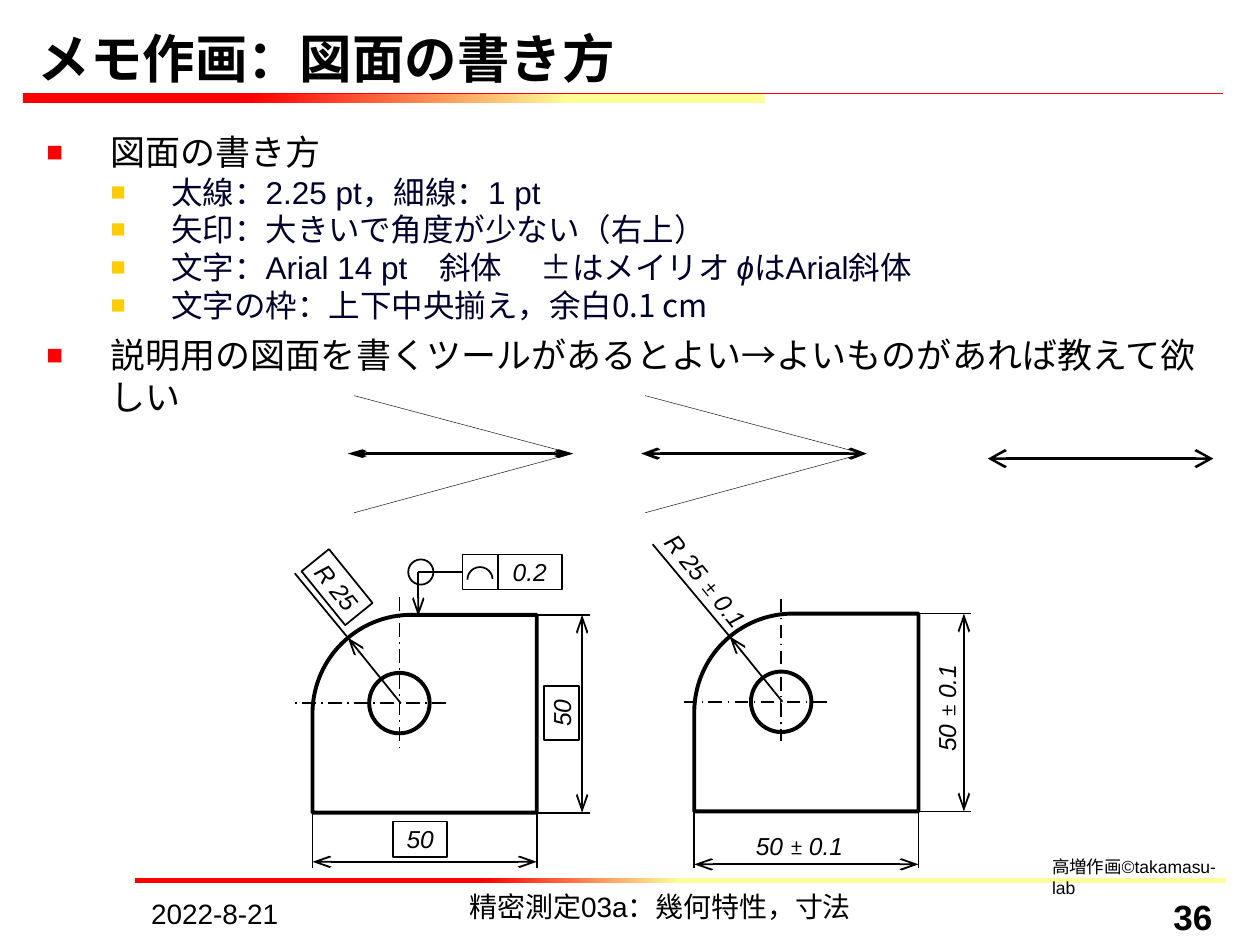
import pptx
import pptx.util
import pptx.dml.color
import pptx.enum.dml
import pptx.enum.shapes
import pptx.enum.text
import pptx.oxml
import pptx.oxml.ns
from lxml import etree

Inches = pptx.util.Inches
Pt = pptx.util.Pt
RGBColor = pptx.dml.color.RGBColor
SHAPE = pptx.enum.shapes.MSO_SHAPE
ALIGN = pptx.enum.text.PP_ALIGN
ANCHOR = pptx.enum.text.MSO_ANCHOR
qn = pptx.oxml.ns.qn

BLACK = RGBColor(0x00, 0x00, 0x00)
WHITE = RGBColor(0xFF, 0xFF, 0xFF)
RED = RGBColor(0xFF, 0x00, 0x00)
YELLOW = RGBColor(0xFF, 0xFF, 0x99)
GOLD = RGBColor(0xFF, 0xCC, 0x00)
NAVY = RGBColor(0x00, 0x00, 0x2A)
JP = "Noto Sans CJK JP"
TOLERANCE = [("± ", "Cambria", False), ("0.1", "Arial", True)]
LEVELS = [
    dict(size=20, color=BLACK, bullet=RED, left=0.51, hang=0.51, line=24),
    dict(size=18, color=NAVY, bullet=GOLD, left=0.99, hang=0.48, line=21.5),
]
BODY = [
    (0, [("図面の書き方", "Arial", False)]),
    (1, [("太線：2.25 pt，細線：1 pt", "Arial", False)]),
    (1, [("矢印：大きいで角度が少ない（右上）", "Arial", False)]),
    (1, [("文字：Arial 14 pt　斜体　 ", "Arial", False), ("±はメイリオ ", JP, False),
         ("ϕ", "Arial", True), ("はArial斜体", "Arial", False)]),
    (1, [("文字の枠：上下中央揃え，余白0.1 cm", JP, False)]),
    (0, [("説明用の図面を書くツールがあるとよい→よいものがあれば教えて欲しい", "Arial", False)]),
]


def add_runs(p, runs, size, color=BLACK, bold=False):
    for text, font, italic in runs:
        r = p.add_run()
        r.text = text
        r.font.size = Pt(size)
        r.font.bold = bold
        r.font.italic = italic
        r.font.color.rgb = color
        r.font.name = font
        etree.SubElement(r.font._element, qn("a:ea")).set("typeface", JP)


def set_insets(tf, left, top, right, bottom):
    tf.margin_left, tf.margin_top = Inches(left), Inches(top)
    tf.margin_right, tf.margin_bottom = Inches(right), Inches(bottom)


def add_text(s, box, runs, size, align=ALIGN.LEFT, bold=False, wrap=True,
             insets=(0.1, 0.05, 0.1, 0.05), anchor=ANCHOR.TOP, rotation=0):
    sp = s.shapes.add_textbox(*map(Inches, box))
    sp.rotation = rotation
    tf = sp.text_frame
    tf.word_wrap = wrap
    tf.vertical_anchor = anchor
    set_insets(tf, *insets)
    tf.paragraphs[0].alignment = align
    add_runs(tf.paragraphs[0], runs, size, bold=bold)
    return sp


def add_outline(s, kind, box, width=1, fill=None, rotation=0, adjust=()):
    sp = s.shapes.add_shape(kind, *map(Inches, box))
    sp.shadow.inherit = False
    sp.rotation = rotation
    for i, value in enumerate(adjust):
        sp.adjustments[i] = value
    if fill is None:
        sp.fill.background()
    else:
        sp.fill.solid()
        sp.fill.fore_color.rgb = fill
    sp.line.color.rgb = BLACK
    sp.line.width = Pt(width)
    return sp


def add_frame(s, box, text="", rotation=0):
    sp = add_outline(s, SHAPE.RECTANGLE, box, fill=WHITE, rotation=rotation)
    if text:
        tf = sp.text_frame
        tf.word_wrap = False
        tf.vertical_anchor = ANCHOR.MIDDLE
        set_insets(tf, 0.04, 0.04, 0.04, 0.04)
        tf.paragraphs[0].alignment = ALIGN.CENTER
        add_runs(tf.paragraphs[0], [(text, "Arial", True)], 14)
    return sp


def add_line(s, x1, y1, x2, y2, width=1, color=BLACK, ends=(), head="med", dashed=False):
    ln = s.shapes.add_connector(pptx.enum.shapes.MSO_CONNECTOR.STRAIGHT,
                                *map(Inches, (x1, y1, x2, y2)))
    ln.line.color.rgb = color
    ln.line.width = Pt(width)
    if dashed:
        ln.line.dash_style = pptx.enum.dml.MSO_LINE.LONG_DASH_DOT
    for end in ends:
        tip = etree.SubElement(ln.line._get_or_add_ln(), qn(f"a:{end}End"))
        for key, value in (("type", "arrow"), ("w", head), ("len", "lg")):
            tip.set(key, value)
    etree.SubElement(ln._element.spPr, qn("a:effectLst"))
    return ln


def add_gradient_bar(s, box, yellow_at, red_at):
    sp = s.shapes.add_shape(SHAPE.RECTANGLE, *map(Inches, box))
    sp.shadow.inherit = False
    sp.line.fill.background()
    sp.fill.gradient()
    sp.fill.gradient_angle = 180
    stops = zip(sp.fill.gradient_stops, ((yellow_at, YELLOW), (red_at, RED)))
    for stop, (position, color) in stops:
        stop.position = position
        stop.color.rgb = color


def add_body(s):
    tf = s.shapes.add_textbox(*map(Inches, (0.27, 0.99, 9.45, 5.91))).text_frame
    tf.word_wrap = True
    for i, (level, runs) in enumerate(BODY):
        style = LEVELS[level]
        p = tf.add_paragraph() if i else tf.paragraphs[0]
        p.level = level
        pPr = p._p.get_or_add_pPr()
        pPr.set("marL", str(Inches(style["left"])))
        pPr.set("indent", str(-Inches(style["hang"])))
        color = etree.SubElement(pPr, qn("a:buClr"))
        etree.SubElement(color, qn("a:srgbClr")).set("val", str(style["bullet"]))
        etree.SubElement(pPr, qn("a:buSzPct")).set("val", "80000")
        etree.SubElement(pPr, qn("a:buFont")).set("typeface", "Arial")
        etree.SubElement(pPr, qn("a:buChar")).set("char", "■")
        p.line_spacing = Pt(style["line"])
        p.space_before = Pt(6 if i and level == 0 else 0)
        add_runs(p, runs, style["size"], style["color"])


def add_arrow_samples(s):
    for x, y, head in ((2.76, 3.6, "sm"), (5.09, 3.6, "med"), (7.84, 3.64, "lg")):
        add_line(s, x, y, x + 1.79, y, 1.5, ends=("head", "tail"), head=head)
    for x in (2.81, 5.12):
        for y in (3.14, 4.07):
            add_line(s, x, y, x + 1.73, 3.6, 0.25)


def add_plate(s, x, y, across, down, leader, dim_y):
    w, h = 1.78, 1.57
    right, bottom = x + w, y + h
    cx, cy = x + 0.69, y + 0.7
    both = ("head", "tail")
    add_outline(s, SHAPE.SNIP_ROUND_RECTANGLE, (x, y, w, h), 2.25, adjust=(0.5, 0))
    add_outline(s, SHAPE.OVAL, (cx - 0.24, cy - 0.24, 0.48, 0.48), 2.25)
    add_line(s, across[1], cy, across[0], cy, dashed=True)
    add_line(s, cx, down[0], cx, down[1], dashed=True)
    add_line(s, cx + 0.01, cy, x + 0.28, y + 0.18, ends=("tail",))
    add_line(s, x + 0.28, y + 0.18, *leader)
    add_line(s, x, dim_y, right, dim_y, ends=both)
    add_line(s, right + 0.36, bottom, right + 0.36, y, ends=both)
    for edge in (y, bottom):
        add_line(s, right + 0.42, edge, right, edge)
    for edge in (x, right):
        add_line(s, edge, bottom, edge, 6.89)


def add_framed_labels(s):
    add_frame(s, (3.12, 6.52, 0.43, 0.28), "50")
    add_frame(s, (4.24, 5.52, 0.43, 0.28), "50", 270)
    add_frame(s, (2.4, 4.52, 0.55, 0.28), "R 25", 51)
    symbol = add_frame(s, (3.67, 4.4, 0.28, 0.28))
    add_frame(s, (3.95, 4.4, 0.51, 0.28), "0.2")
    add_outline(s, SHAPE.ARC, (3.71, 4.5, 0.2, 0.2), rotation=270, adjust=(162, 52.19))
    add_line(s, 3.32, 4.54, 3.67, 4.54).end_connect(symbol, 1)
    add_line(s, 3.32, 4.89, 3.32, 4.54, ends=("head",))
    add_outline(s, SHAPE.OVAL, (3.24, 4.44, 0.2, 0.2))


def add_tolerance_labels(s):
    for box, text, rotation in (((5.89, 6.55, 0.91, 0.34), "50 ", 0),
                                ((7.06, 5.45, 0.91, 0.34), "50 ", 270),
                                ((5.05, 4.44, 1.1, 0.34), "R 25 ", 51)):
        add_text(s, box, [(text, "Arial", True)] + TOLERANCE, 14, ALIGN.CENTER,
                 wrap=False, rotation=rotation)


def add_footer(s):
    add_text(s, (8.31, 6.75, 1.5, 0.25), [("高増作画©takamasu-lab", "Arial", False)], 10,
             insets=(0.04, 0.04, 0.04, 0.04))
    add_text(s, (1.1, 7.07, 1.41, 0.3), [("2022-8-21", "Arial", False)], 16)
    add_text(s, (2.64, 7.06, 5.2, 0.29), [("精密測定03a：幾何特性，寸法", "Arial", False)], 16,
             ALIGN.CENTER, insets=(0.1, 0, 0.1, 0))
    add_text(s, (8.07, 7.06, 1.65, 0.29), [("36", "Arial", False)], 20, ALIGN.RIGHT, bold=True)


def main():
    prs = pptx.Presentation()
    prs.slide_width, prs.slide_height = Inches(10), Inches(7.5)
    s = prs.slides.add_slide(prs.slide_layouts[6])
    add_gradient_bar(s, (1.07, 6.97, 8.66, 0.04), 0.5, 0.68)
    add_gradient_bar(s, (0.18, 0.74, 5.89, 0.08), 0.26, 0.69)
    add_line(s, 0.18, 0.74, 9.71, 0.74, 0.75, RED)
    add_text(s, (0.2, 0.21, 9.53, 0.5), [("メモ作画：図面の書き方", "Arial", False)], 30,
             bold=True, anchor=ANCHOR.BOTTOM, insets=(0.1, 0, 0.1, 0))
    add_body(s)
    add_arrow_samples(s)
    add_plate(s, 5.51, 4.87, (5.43, 6.56), (4.75, 5.88), (5.18, 4.32), 6.86)
    add_tolerance_labels(s)
    add_plate(s, 2.48, 4.88, (2.34, 3.54), (4.74, 5.95), (2.34, 4.55), 6.84)
    add_framed_labels(s)
    add_footer(s)
    prs.save("out.pptx")


if __name__ == "__main__":
    main()
